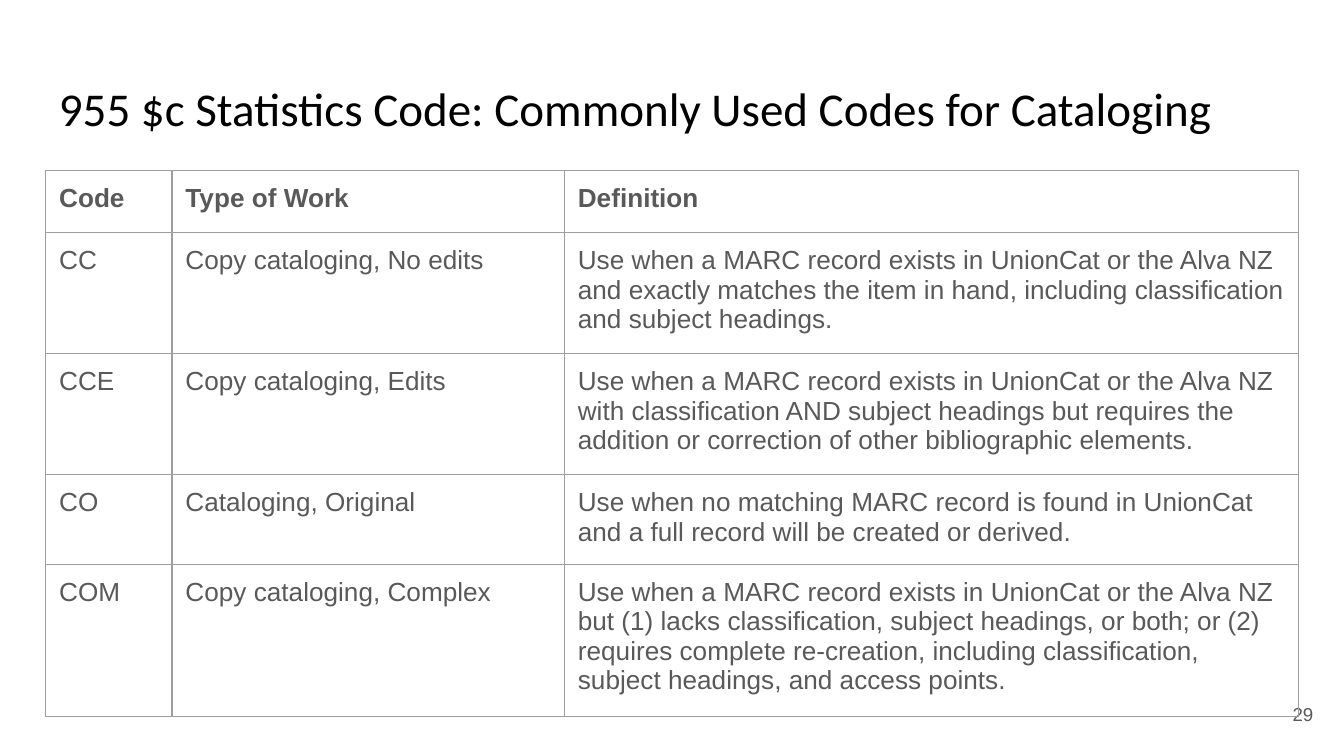
from dataclasses import dataclass

from lxml.etree import SubElement
from pptx import Presentation
from pptx.dml.color import RGBColor
from pptx.enum.text import MSO_ANCHOR, PP_ALIGN
from pptx.oxml.ns import qn
from pptx.util import Inches, Pt


@dataclass(frozen=True)
class Theme:
    title: str = "000000"
    body: str = "595959"
    border: str = "9E9E9E"
    title_font: str = "Calibri"
    body_font: str = "Arial"
    title_size: float = 25.2
    body_size: float = 14
    number_size: float = 10
    border_width: float = 0.75
    inset: float = 0.1


theme = Theme()


def write(tf, text, font=theme.body_font, size=theme.body_size, color=theme.body,
          bold=False, align=PP_ALIGN.LEFT, anchor=MSO_ANCHOR.TOP):
    tf.word_wrap = True
    tf.vertical_anchor = anchor
    tf.margin_left = tf.margin_right = Inches(theme.inset)
    tf.margin_top = tf.margin_bottom = Inches(theme.inset)
    p = tf.paragraphs[0]
    p.alignment = align
    r = p.add_run()
    r.text = text
    r.font.name = font
    r.font.size = Pt(size)
    r.font.bold = bold
    r.font.color.rgb = RGBColor.from_string(color)


def add_borders(cell):
    tcPr = cell._tc.get_or_add_tcPr()
    for i, side in enumerate(("a:lnL", "a:lnR", "a:lnT", "a:lnB")):
        ln = SubElement(tcPr, qn(side), w=str(Pt(theme.border_width)))
        fill = SubElement(ln, qn("a:solidFill"))
        SubElement(fill, qn("a:srgbClr"), val=theme.border)
        # Lines come before the cell's fill
        tcPr.insert(i, ln)


# Widescreen 16:9 slide
prs = Presentation()
prs.slide_width = Inches(10)
prs.slide_height = Inches(10 * 9 / 16)
s = prs.slides.add_slide(prs.slide_layouts[6])

# Title
sp = s.shapes.add_textbox(Inches(0.34), Inches(0.49), Inches(9.32), Inches(0.63))
write(sp.text_frame, "955 $c Statistics Code: Commonly Used Codes for Cataloging",
      font=theme.title_font, size=theme.title_size, color=theme.title)

# Slide number
sp = s.shapes.add_textbox(Inches(9.27), Inches(5.1), Inches(0.6), Inches(0.43))
write(sp.text_frame, "29", size=theme.number_size, align=PP_ALIGN.RIGHT,
      anchor=MSO_ANCHOR.MIDDLE)

# Table of statistics codes; rows grow to fit their text
col_widths = [0.94, 2.92, 5.46]
row_heights = [0.46, 0.87, 0.46, 0.42, 0.42]
rows = [
    ("Code", "Type of Work", "Definition"),
    ("CC", "Copy cataloging, No edits",
     "Use when a MARC record exists in UnionCat or the Alva NZ and exactly matches "
     "the item in hand, including classification and subject headings."),
    ("CCE", "Copy cataloging, Edits",
     "Use when a MARC record exists in UnionCat or the Alva NZ with classification "
     "AND subject headings but requires the addition or correction of other "
     "bibliographic elements."),
    ("CO", "Cataloging, Original",
     "Use when no matching MARC record is found in UnionCat and a full record will "
     "be created or derived."),
    ("COM", "Copy cataloging, Complex",
     "Use when a MARC record exists in UnionCat or the Alva NZ but (1) lacks "
     "classification, subject headings, or both; or (2) requires complete "
     "re-creation, including classification, subject headings, and access points."),
]
frame = s.shapes.add_table(len(rows), len(col_widths), Inches(0.34), Inches(1.27),
                           Inches(sum(col_widths)), Inches(sum(row_heights)))
table = frame.table
table.horz_banding = False
table.first_row = False
for col, width in zip(table.columns, col_widths):
    col.width = Inches(width)
for i, (row, height) in enumerate(zip(table.rows, row_heights)):
    row.height = Inches(height)
    for cell, text in zip(row.cells, rows[i]):
        cell.fill.background()
        add_borders(cell)
        cell.margin_left = cell.margin_right = Inches(theme.inset)
        cell.margin_top = cell.margin_bottom = Inches(theme.inset)
        write(cell.text_frame, text, bold=i == 0)
frame.width = frame.height = Inches(3.28)

prs.save("out.pptx")
